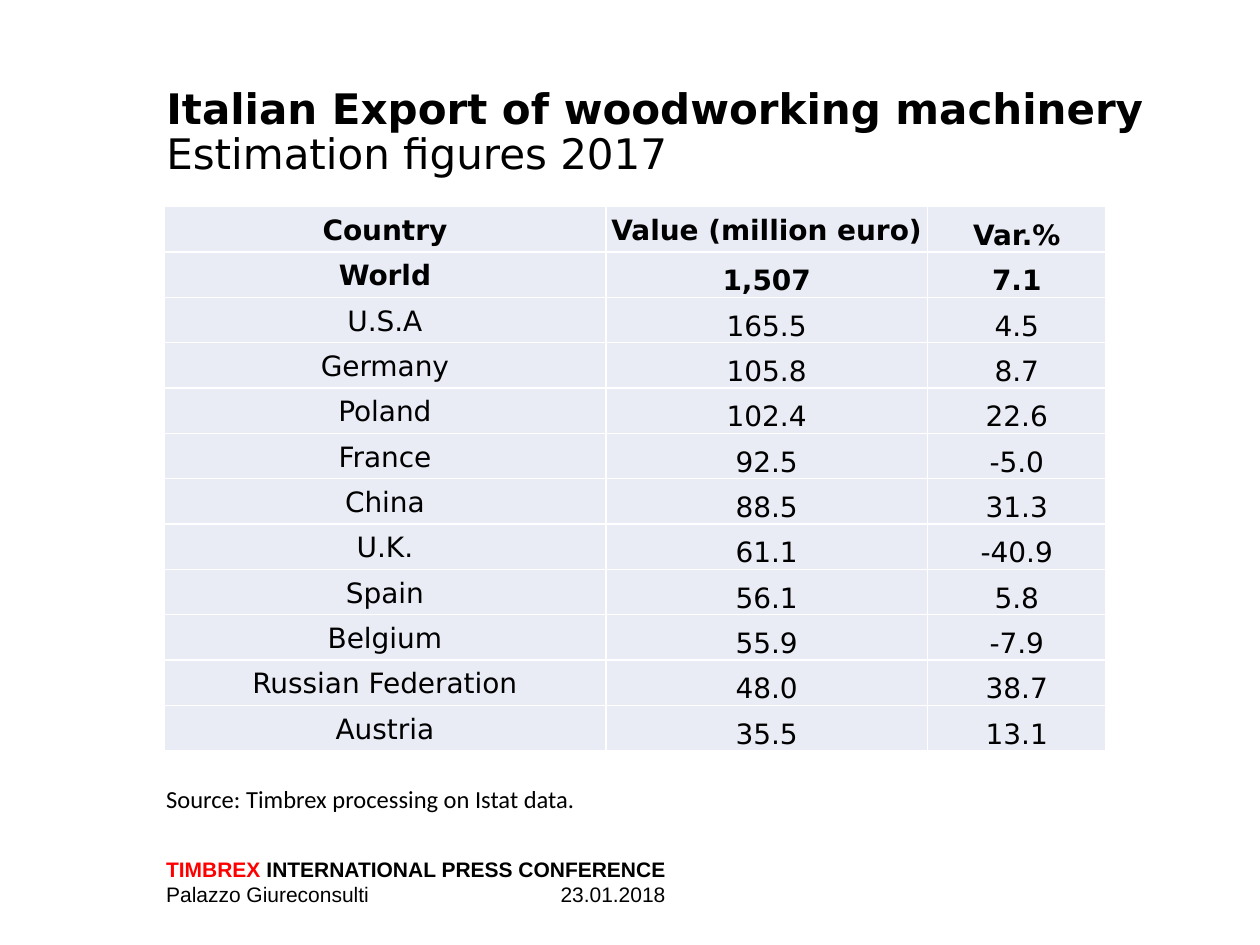
from lxml import etree
from pptx import Presentation
from pptx import util as u
from pptx.dml.color import RGBColor
from pptx.enum import text
from pptx.oxml import ns

ROWS = [
    ("Country", "Value (million euro)", "Var.%"),
    ("World", "1,507", "7.1"),
    ("U.S.A", "165.5", "4.5"),
    ("Germany", "105.8", "8.7"),
    ("Poland", "102.4", "22.6"),
    ("France", "92.5", "-5.0"),
    ("China", "88.5", "31.3"),
    ("U.K.", "61.1", "-40.9"),
    ("Spain", "56.1", "5.8"),
    ("Belgium", "55.9", "-7.9"),
    ("Russian Federation", "48.0", "38.7"),
    ("Austria", "35.5", "13.1"),
]
COL_WIDTHS = (3.51, 2.55, 1.42)
ROW_HEIGHT = 0.36
BOLD_ROWS = 2


def rgb(value):
    return RGBColor.from_string(value)


def add_run(p, content, font="DejaVu Sans", size=16, color="000000", bold=False):
    r = p.add_run()
    r.text = content
    r.font.name = font
    r.font.size = u.Pt(size)
    r.font.bold = bold
    r.font.color.rgb = rgb(color)
    return r


def sub(parent, tag, **attrs):
    return etree.SubElement(parent, ns.qn(tag), attrs)


class Deck:
    cell_fill = "E9EBF5"
    border = "FFFFFF"

    def __init__(self, prs):
        self.s = prs.slides.add_slide(prs.slide_layouts[5])

    def title(self, x, y, w, h, first, second):
        sp = self.s.shapes.title
        sp.left, sp.top, sp.width, sp.height = map(u.Inches, (x, y, w, h))
        tf = sp.text_frame
        tf.word_wrap = True
        tf.auto_size = text.MSO_AUTO_SIZE.NONE
        tf.vertical_anchor = text.MSO_ANCHOR.TOP
        p = tf.paragraphs[0]
        p.alignment = text.PP_ALIGN.LEFT
        p.line_spacing = 0.9
        add_run(p, first, size=24, bold=True)
        p.add_line_break()
        add_run(p, second, size=24)

    def textbox(self, x, y, w, h):
        sp = self.s.shapes.add_textbox(*map(u.Inches, (x, y, w, h)))
        tf = sp.text_frame
        tf.word_wrap = True
        return tf

    def tab_stop(self, p, x):
        tabs = sub(p._p.get_or_add_pPr(), "a:tabLst")
        sub(tabs, "a:tab", pos=str(u.Inches(x)), algn="l")

    def borders(self, cell):
        tc_pr = cell._tc.get_or_add_tcPr()
        for side in "LRTB":
            ln = sub(tc_pr, f"a:ln{side}", w=str(u.Pt(1)))
            sub(sub(ln, "a:solidFill"), "a:srgbClr", val=self.border)

    def cell(self, cell, content, bold, pad_top, pad_bottom):
        self.borders(cell)
        cell.fill.solid()
        cell.fill.fore_color.rgb = rgb(self.cell_fill)
        cell.vertical_anchor = text.MSO_ANCHOR.BOTTOM
        cell.margin_left = cell.margin_right = u.Inches(0.01)
        cell.margin_top = u.Inches(pad_top)
        cell.margin_bottom = u.Inches(pad_bottom)
        p = cell.text_frame.paragraphs[0]
        p.alignment = text.PP_ALIGN.CENTER
        add_run(p, content, bold=bold)

    def table(self, x, y, rows, widths, row_height):
        size = (sum(widths), row_height * len(rows))
        table = self.s.shapes.add_table(
            len(rows), len(widths), *map(u.Inches, (x, y, *size))).table
        table.first_row = table.horz_banding = False
        for col, width in zip(table.columns, widths):
            col.width = u.Inches(width)
        for i, row in enumerate(rows):
            table.rows[i].height = u.Inches(row_height)
            for j, content in enumerate(row):
                # Labels sit higher than figures
                is_label = j == 0 or (i == 0 and j == 1)
                pads = (0.04, 0.04) if is_label else (0.01, 0)
                self.cell(table.cell(i, j), content, i < BOLD_ROWS, *pads)


def main():
    prs = Presentation()
    prs.slide_width, prs.slide_height = u.Inches(10), u.Inches(7.5)
    deck = Deck(prs)

    # Event footer
    tf = deck.textbox(1.22, 6.75, 4.65, 0.51)
    p = tf.paragraphs[0]
    add_run(p, "TIMBREX", font="Arial", size=12, color="FF0000", bold=True)
    add_run(p, " INTERNATIONAL PRESS CONFERENCE", font="Arial", size=12, bold=True)
    p = tf.add_paragraph()
    deck.tab_stop(p, 3.13)
    add_run(p, "Palazzo Giureconsulti\t23.01.2018", font="Arial", size=12)

    # Title
    deck.title(1.22, 0.65, 8.03, 1.21,
               "Italian Export of woodworking machinery", "Estimation figures 2017")

    # Export figures
    deck.table(1.3, 1.64, ROWS, COL_WIDTHS, ROW_HEIGHT)

    # Source line
    tf = deck.textbox(1.22, 6.17, 5.75, 0.34)
    add_run(tf.paragraphs[0], "Source: Timbrex processing on Istat data.",
            font="Calibri", size=14)

    prs.save("out.pptx")


if __name__ == "__main__":
    main()
